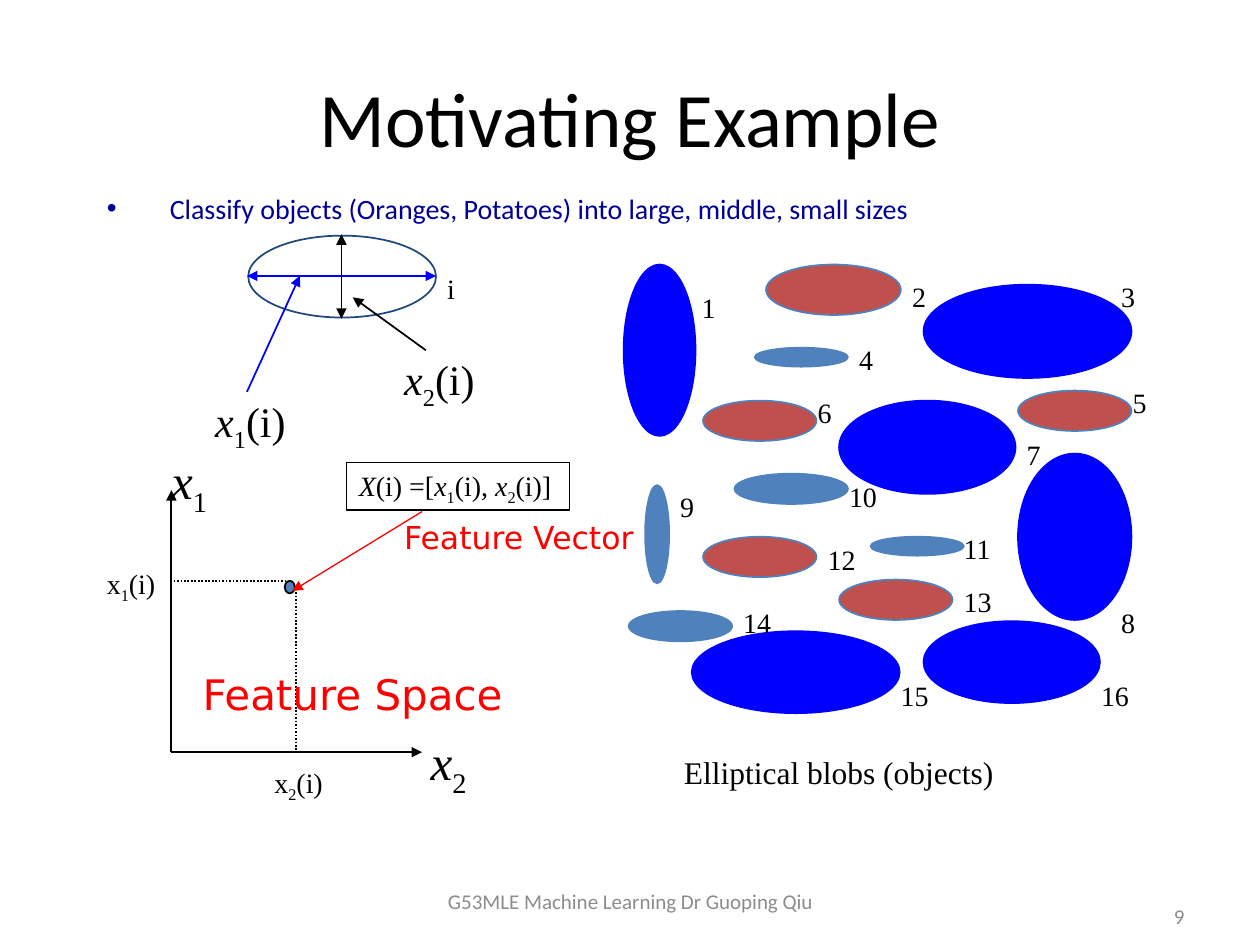
from dataclasses import dataclass

from lxml.etree import SubElement
from pptx import Presentation
from pptx.dml.color import RGBColor
from pptx.enum.dml import MSO_LINE
from pptx.enum.shapes import MSO_CONNECTOR, MSO_SHAPE
from pptx.enum.text import MSO_ANCHOR, MSO_AUTO_SIZE, PP_ALIGN
from pptx.oxml.ns import qn
from pptx.util import Inches, Pt


@dataclass(frozen=True)
class Theme:
    black: str = "000000"
    navy: str = "000099"
    blue: str = "0000FF"
    steel: str = "4F81BD"
    brick: str = "C0504D"
    outline: str = "1F497D"
    red: str = "FF0000"
    grey: str = "8C8C8C"
    sans: str = "Calibri"
    serif: str = "Times New Roman"
    accent: str = "DejaVu Sans"
    title: int = 44
    axis: int = 28
    large: int = 24
    medium: int = 18
    label: int = 16
    footer: int = 12


THEME = Theme()
LARGE = (THEME.blue, THEME.blue)
MIDDLE = (THEME.brick, THEME.steel)
SMALL = (THEME.steel, THEME.steel)

BLOBS = [
    (LARGE, (4.95, 2.1, 0.57, 1.36), (5.47, 2.26)),
    (MIDDLE, (6.08, 2.1, 1.07, 0.4), (7.14, 2.17)),
    (LARGE, (7.33, 2.26, 1.65, 0.74), (8.8, 2.17)),
    (SMALL, (5.99, 2.76, 0.74, 0.15), (6.72, 2.67)),
    (MIDDLE, (8.08, 3.1, 0.9, 0.32), (8.89, 3.01)),
    (MIDDLE, (5.58, 3.18, 0.9, 0.32), (6.39, 3.09)),
    (LARGE, (6.66, 3.18, 1.4, 0.74), (8.05, 3.42)),
    (LARGE, (8.08, 3.6, 0.9, 1.32), (8.8, 4.76)),
    (SMALL, (5.12, 3.85, 0.19, 0.78), (5.3, 3.84)),
    (SMALL, (5.83, 3.76, 0.9, 0.24), (6.64, 3.76)),
    (SMALL, (6.91, 4.26, 0.74, 0.15), (7.55, 4.17)),
    (MIDDLE, (5.58, 4.26, 0.9, 0.32), (6.47, 4.26)),
    (MIDDLE, (6.66, 4.6, 0.9, 0.32), (7.55, 4.59)),
    (SMALL, (4.99, 4.85, 0.82, 0.24), (5.8, 4.76)),
    (LARGE, (5.49, 5.01, 1.65, 0.65), (7.05, 5.34)),
    (LARGE, (7.33, 4.93, 1.4, 0.65), (8.64, 5.34)),
]


def write(box, text, font=THEME.serif, size=THEME.label, color=THEME.black,
          align=PP_ALIGN.LEFT, anchor=MSO_ANCHOR.TOP, wrap=False):
    frame = box.text_frame
    frame.word_wrap = wrap
    frame.vertical_anchor = anchor
    para = frame.paragraphs[0]
    para.alignment = align
    pieces = [(text, "")] if isinstance(text, str) else text
    for words, style in pieces:
        span = para.add_run()
        span.text = words
        span.font.name = font
        span.font.size = Pt(size)
        span.font.color.rgb = RGBColor.from_string(color)
        if style == "italic":
            span.font.italic = True
        elif style == "sub":
            span._r.get_or_add_rPr().set("baseline", "-25000")
    return para


def add_text(page, place, text, **style):
    box = page.shapes.add_textbox(*map(Inches, place))
    para = write(box, text, **style)
    if not style.get("wrap"):
        box.text_frame.auto_size = MSO_AUTO_SIZE.SHAPE_TO_FIT_TEXT
    return para


def add_outline(page, kind, place, fill=None, line=THEME.black):
    shape = page.shapes.add_shape(kind, *map(Inches, place))
    shape.shadow.inherit = False
    if fill:
        shape.fill.solid()
        shape.fill.fore_color.rgb = RGBColor.from_string(fill)
    else:
        shape.fill.background()
    shape.line.color.rgb = RGBColor.from_string(line)
    shape.line.width = Pt(1)
    return shape


def add_line(page, start, end, color=THEME.black, width=1, ends=(), dotted=False):
    line = page.shapes.add_connector(
        MSO_CONNECTOR.STRAIGHT, *map(Inches, (*start, *end)))
    line.line.color.rgb = RGBColor.from_string(color)
    line.line.width = Pt(width)
    if dotted:
        line.line.dash_style = MSO_LINE.ROUND_DOT
    for end_name in ends:
        SubElement(line.line._get_or_add_ln(), qn(f"a:{end_name}"), type="triangle")
    SubElement(line._element.spPr, qn("a:effectLst"))


def add_bullet(para, indent):
    properties = para._p.get_or_add_pPr()
    properties.set("marL", str(Inches(indent)))
    properties.set("indent", str(-Inches(indent)))
    SubElement(properties, qn("a:buFont"), typeface="Arial")
    SubElement(properties, qn("a:buChar"), char="•")


def feature(number, italic=True, suffix="(i)"):
    pieces = [("x", "italic" if italic else ""), (str(number), "sub")]
    return pieces + [(suffix, "")] if suffix else pieces


def add_heading(page):
    title = page.shapes.title
    title.left, title.top, title.width, title.height = map(Inches, (0.5, 0.3, 9, 1.25))
    write(title, "Motivating Example", font=THEME.sans, size=THEME.title,
          align=PP_ALIGN.CENTER, anchor=MSO_ANCHOR.MIDDLE, wrap=True)
    para = add_text(page, (0.75, 1.47, 8.5, 0.4),
                    "Classify objects (Oranges, Potatoes) into large, middle, small sizes",
                    font=THEME.sans, color=THEME.navy, wrap=True)
    add_bullet(para, 0.5)


def add_blobs(page):
    for (fill, line), place, _ in BLOBS:
        add_outline(page, MSO_SHAPE.OVAL, place, fill, line)
    for number, (_, _, corner) in enumerate(BLOBS, 1):
        width = 0.31 if number < 10 else 0.42
        add_text(page, (*corner, width, 0.36), str(number))
    add_text(page, (5.33, 5.93, 4.08, 0.4), "Elliptical blobs (objects)",
             size=THEME.medium, wrap=True)


def add_measured_ellipse(page):
    both = ("headEnd", "tailEnd")
    add_outline(page, MSO_SHAPE.OVAL, (1.97, 1.87, 1.49, 0.65), line=THEME.outline)
    add_line(page, (1.96, 2.19), (3.46, 2.19), THEME.blue, ends=both)
    add_line(page, (2.71, 1.86), (2.71, 2.53), ends=both)
    add_line(page, (2.38, 2.19), (1.96, 3.11), THEME.blue, ends=("headEnd",))
    add_line(page, (2.8, 2.36), (3.38, 2.78), ends=("headEnd",))
    add_text(page, (3.11, 2.76, 0.77, 0.5), feature(2), size=THEME.large)
    add_text(page, (1.61, 3.09, 0.77, 0.5), feature(1), size=THEME.large)
    add_text(page, (3.45, 2.11, 0.26, 0.36), "i")


def add_feature_space(page):
    vector = add_outline(page, MSO_SHAPE.RECTANGLE, (2.75, 3.67, 1.77, 0.38))
    write(vector, [("X", "italic"), ("(i) =[", ""),
                   *feature(1, suffix="(i), "), *feature(2, suffix="(i)]")])
    origin = (1.36, 5.97)
    add_line(page, (1.36, 3.89), origin, ends=("headEnd",))
    add_line(page, origin, (3.35, 5.97), ends=("tailEnd",))
    add_text(page, (1.26, 3.53, 0.5, 0.56), feature(1, suffix=""), size=THEME.axis)
    add_text(page, (3.32, 5.76, 0.5, 0.56), feature(2, suffix=""), size=THEME.axis)
    add_outline(page, MSO_SHAPE.OVAL, (2.26, 4.61, 0.08, 0.1), THEME.steel)
    add_line(page, (1.35, 4.61), (2.26, 4.61), dotted=True)
    add_line(page, (2.35, 4.7), (2.35, 5.95), dotted=True)
    add_text(page, (2.08, 6.03, 0.6, 0.36), feature(2, italic=False))
    add_text(page, (0.75, 4.45, 0.6, 0.36), feature(1, italic=False))
    add_text(page, (1.51, 5.26, 2.6, 0.5), "Feature Space",
             font=THEME.accent, size=THEME.large, color=THEME.red)
    add_line(page, (3.35, 4.06), (2.32, 4.69), THEME.red, 0.75, ends=("tailEnd",))
    add_text(page, (3.11, 4.06, 2.05, 0.4), "Feature Vector",
             font=THEME.accent, size=THEME.medium, color=THEME.red)


def add_footer(page):
    style = dict(font=THEME.sans, size=THEME.footer, color=THEME.grey,
                 anchor=MSO_ANCHOR.MIDDLE, wrap=True)
    add_text(page, (3.42, 6.95, 3.17, 0.4), "G53MLE Machine Learning Dr Guoping Qiu",
             align=PP_ALIGN.CENTER, **style)
    add_text(page, (7.17, 7.07, 2.33, 0.4), "9", align=PP_ALIGN.RIGHT, **style)


def main():
    deck = Presentation()
    deck.slide_width, deck.slide_height = Inches(10), Inches(7.5)
    page = deck.slides.add_slide(deck.slide_layouts[5])
    add_heading(page)
    add_blobs(page)
    add_measured_ellipse(page)
    add_feature_space(page)
    add_footer(page)
    deck.save("out.pptx")


if __name__ == "__main__":
    main()
